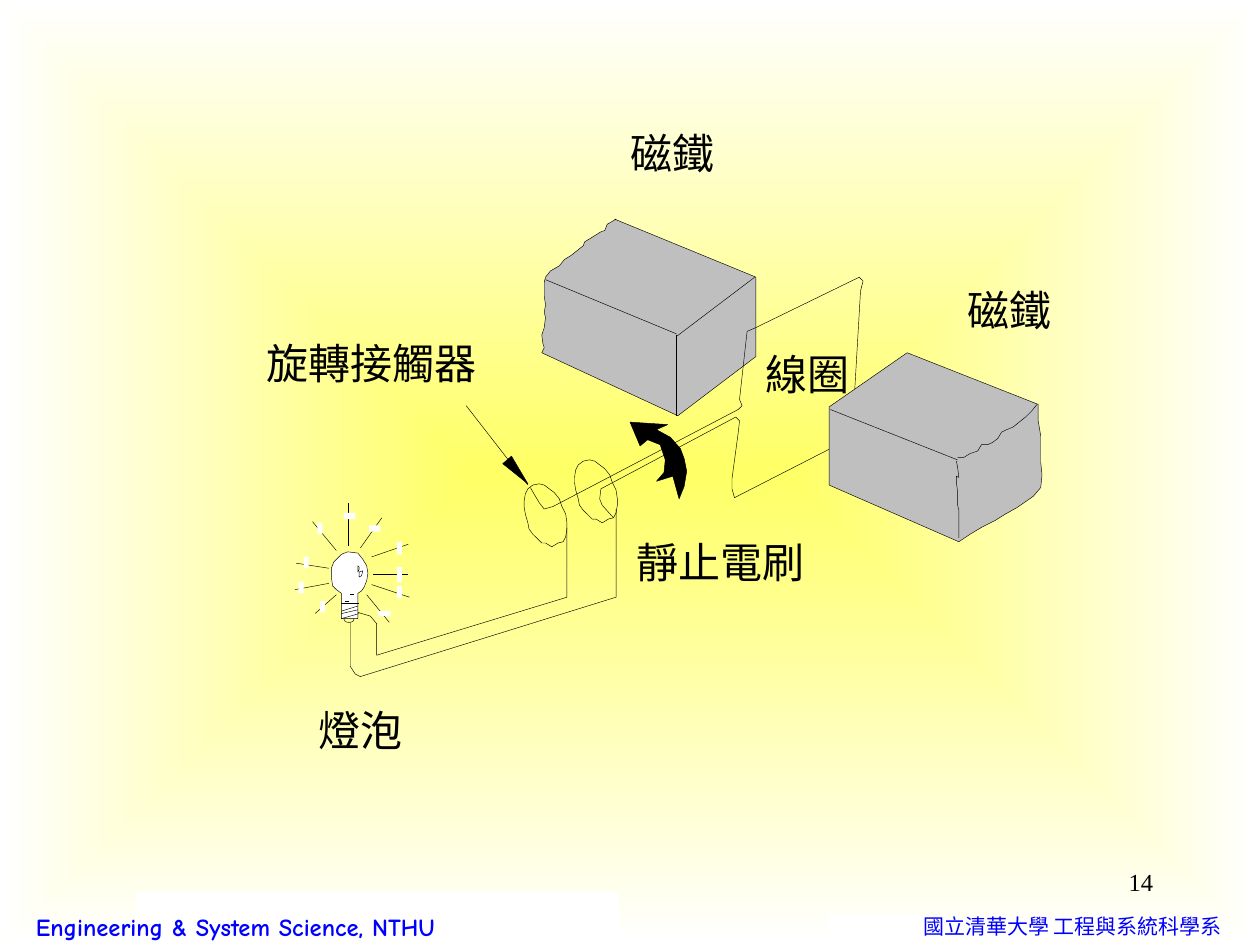
from dataclasses import dataclass

from lxml.etree import SubElement
from pptx import Presentation
from pptx.dml.color import RGBColor
from pptx.enum.shapes import MSO_CONNECTOR, MSO_SHAPE
from pptx.enum.text import MSO_ANCHOR, PP_ALIGN
from pptx.oxml.ns import qn
from pptx.util import Inches, Pt


@dataclass(frozen=True)
class Theme:
    ink: RGBColor = RGBColor(0, 0, 0)
    white: RGBColor = RGBColor(255, 255, 255)
    glow: RGBColor = RGBColor(0xFF, 0xFF, 0x66)
    magnet: RGBColor = RGBColor(0xBF, 0xBF, 0xBF)
    footer: RGBColor = RGBColor(0, 0, 255)
    serif: str = "Times New Roman"
    cjk: str = "Noto Sans CJK SC"
    comic: str = "Comic Neue"
    label_size: Pt = Pt(24)
    footer_size: Pt = Pt(14)
    department_size: Pt = Pt(12)
    hairline: Pt = Pt(0.25)
    rule: Pt = Pt(2.25)


theme = Theme()
prs = Presentation()
prs.slide_width, prs.slide_height = Inches(10), Inches(7.5)
slide = prs.slides.add_slide(prs.slide_layouts[6])
shapes = slide.shapes


def outline(points, fill=None, close=False):
    """Draw a hairline outline through points given in inches."""
    grid = [(round(x * 100), round(y * 100)) for x, y in points]
    builder = shapes.build_freeform(*grid[0], scale=Inches(0.01))
    builder.add_line_segments(grid[1:], close=close)
    shape = builder.convert_to_shape()
    shape.shadow.inherit = False
    shape.line.color.rgb = theme.ink
    shape.line.width = theme.hairline
    if fill is None:
        shape.fill.background()
    else:
        shape.fill.solid()
        shape.fill.fore_color.rgb = fill


def straight(x1, y1, x2, y2, color=theme.ink, width=theme.hairline):
    line = shapes.add_connector(MSO_CONNECTOR.STRAIGHT, Inches(x1), Inches(y1), Inches(x2), Inches(y2))
    line.line.color.rgb = color
    line.line.width = width
    SubElement(line.element.spPr, qn("a:effectLst"))


# Background glowing from the centre
background = slide.background.fill
background.gradient()
for stop, position, color in zip(background.gradient_stops, (0, 1), (theme.glow, theme.white)):
    stop.position = position
    stop.color.rgb = color
gradient = slide.element.find(".//" + qn("a:gradFill"))
gradient.remove(gradient.find(qn("a:lin")))
centre = SubElement(SubElement(gradient, qn("a:path"), {"path": "shape"}), qn("a:fillToRect"))
for side in "ltrb":
    centre.set(side, "50000")

straight(7.24, 7.32, 8.93, 7.32, theme.white, theme.rule)

# Left magnet
outline([(4.88, 1.74), (6, 2.2), (6, 2.83), (5.38, 3.3), (4.3, 2.8), (4.32, 2.76), (4.31, 2.73),
         (4.3, 2.66), (4.32, 2.6), (4.33, 2.52), (4.32, 2.48), (4.33, 2.42), (4.32, 2.35),
         (4.32, 2.24), (4.33, 2.2), (4.37, 2.15), (4.44, 2.11), (4.48, 2.06), (4.53, 2.03),
         (4.63, 1.95), (4.64, 1.92), (4.69, 1.89), (4.77, 1.84), (4.8, 1.83), (4.82, 1.78),
         (4.89, 1.74)], theme.magnet, close=True)
for edge in [(4.33, 2.22, 5.37, 2.65), (5.37, 2.66, 5.37, 3.3), (5.37, 2.67, 5.99, 2.2)]:
    straight(*edge)

# Two slip rings of the same form
ring = [(4.68, 3.65), (4.63, 3.66), (4.59, 3.69), (4.57, 3.73), (4.56, 3.79), (4.56, 3.83),
        (4.57, 3.89), (4.59, 3.96), (4.6, 4.01), (4.63, 4.05), (4.66, 4.08), (4.7, 4.12),
        (4.73, 4.12), (4.78, 4.15), (4.83, 4.12), (4.87, 4.11), (4.89, 4.07), (4.9, 4.01),
        (4.9, 3.96), (4.89, 3.89), (4.86, 3.83), (4.84, 3.77), (4.8, 3.72), (4.76, 3.69),
        (4.72, 3.66)]
for dx, dy in [(0, 0), (-0.4, 0.19)]:
    outline([(x + dx, y + dy) for x, y in ring], close=True)

# Coil and the two leads to the bulb
coil = [(4.21, 3.87), (4.28, 3.99), (4.32, 4.04), (4.39, 4.02), (5.86, 3.25), (5.89, 3.22),
        (5.87, 3.17), (5.92, 2.72), (5.93, 2.63), (6, 2.6), (6.82, 2.2), (6.85, 2.23),
        (6.83, 2.31), (6.77, 3.34), (6.77, 3.42), (6.71, 3.5), (5.83, 3.95), (5.81, 3.88),
        (5.81, 3.8), (5.86, 3.43), (5.87, 3.34), (5.84, 3.31), (4.77, 3.88), (4.76, 3.96),
        (4.78, 4.01), (4.87, 4.11)]
outer_lead = [(4.89, 4.04), (4.89, 4.74), (2.86, 5.37), (2.82, 5.35), (2.78, 5.29), (2.78, 4.94)]
inner_lead = [(4.5, 4.19), (4.5, 4.74), (2.99, 5.2), (2.99, 4.95), (2.94, 4.89), (2.84, 4.86)]
for wire in (coil, outer_lead, inner_lead):
    outline(wire)

# Light bulb
contact = shapes.add_shape(MSO_SHAPE.OVAL, Inches(2.73), Inches(4.89), Inches(0.08), Inches(0.05))
contact.shadow.inherit = False
contact.fill.background()
contact.line.color.rgb = theme.ink
contact.line.width = theme.hairline
glass = [(2.71, 4.4), (2.76, 4.38), (2.84, 4.39), (2.88, 4.44), (2.91, 4.49), (2.92, 4.55),
         (2.91, 4.61), (2.89, 4.66), (2.87, 4.69), (2.84, 4.71), (2.84, 4.91), (2.71, 4.91),
         (2.71, 4.71), (2.67, 4.68), (2.64, 4.65), (2.63, 4.58), (2.63, 4.51), (2.65, 4.46),
         (2.69, 4.42)]
glints = [[(2.88, 4.53), (2.85, 4.54), (2.85, 4.58), (2.87, 4.57)],
          [(2.84, 4.49), (2.84, 4.54), (2.85, 4.52), (2.85, 4.5)]]
for part in (glass, *glints):
    outline(part, theme.white, close=True)
screw_threads = [(2.71, 4.79, 2.85, 4.79), (2.71, 4.91, 2.85, 4.87), (2.71, 4.87, 2.84, 4.84),
                 (2.71, 4.85, 2.84, 4.81), (2.78, 4.72, 2.81, 4.72), (2.74, 4.77, 2.77, 4.77)]
rays = [(2.96, 4.56, 3.24, 4.56), (2.95, 4.64, 3.25, 4.74), (2.91, 4.72, 3.09, 4.94),
        (2.95, 4.42, 3.24, 4.32), (2.86, 4.35, 3.03, 4.11), (2.76, 4.33, 2.76, 3.99),
        (2.67, 4.37, 2.48, 4.14), (2.61, 4.51, 2.35, 4.47), (2.61, 4.63, 2.34, 4.68),
        (2.67, 4.72, 2.5, 4.87)]
for stroke in screw_threads + rays:
    straight(*stroke)

# White breaks in the rays, and white footer bands
ray_breaks = [(3.15, 4.5, 0.04, 0.12), (2.37, 4.62, 0.04, 0.09), (2.54, 4.77, 0.04, 0.09),
              (2.41, 4.42, 0.04, 0.09), (2.52, 4.15, 0.04, 0.09), (2.73, 4.07, 0.09, 0.05),
              (2.93, 4.17, 0.09, 0.05), (3.15, 4.3, 0.04, 0.1), (3.15, 4.65, 0.04, 0.1),
              (3, 4.85, 0.1, 0.04)]
footer_bands = [(1.08, 7.25, 3.67, 0.25), (6.58, 7.25, 0.75, 0.25), (1.08, 7.08, 3.83, 0.42)]
for place in ray_breaks + footer_bands:
    patch = shapes.add_shape(MSO_SHAPE.RECTANGLE, *map(Inches, place))
    patch.shadow.inherit = False
    patch.fill.solid()
    patch.fill.fore_color.rgb = theme.white
    patch.line.fill.background()

# Right magnet
outline([(7.2, 2.8), (6.58, 3.23), (6.58, 3.85), (7.61, 4.3), (7.7, 4.24), (7.8, 4.18), (7.9, 4.13),
         (7.98, 4.08), (8.07, 4.03), (8.2, 3.94), (8.26, 3.87), (8.27, 3.77), (8.26, 3.67),
         (8.26, 3.46), (8.24, 3.34), (8.24, 3.21)], theme.magnet, close=True)
straight(6.59, 3.25, 7.6, 3.65)
outline([(7.6, 3.63), (7.65, 3.63), (7.7, 3.6), (7.76, 3.58), (7.79, 3.53), (7.84, 3.53),
         (7.88, 3.51), (7.92, 3.48), (7.95, 3.43), (7.99, 3.41), (8.04, 3.39), (8.09, 3.35),
         (8.14, 3.31), (8.19, 3.26), (8.23, 3.21)])
outline([(7.59, 3.66), (7.6, 3.71), (7.61, 3.79), (7.59, 3.78), (7.59, 3.83), (7.6, 3.9),
         (7.6, 4.01), (7.61, 4.05), (7.61, 4.27)])

# Pointer to the slip ring, and the rotation arrow
straight(4.19, 3.85, 3.7, 3.22)
pointer_head = [(3.99, 3.68), (4.06, 3.62), (4.19, 3.84)]
rotation_arrow = [(5, 3.35), (5.08, 3.54), (5.14, 3.49), (5.24, 3.53), (5.28, 3.65), (5.27, 3.75),
                  (5.21, 3.82), (5.34, 3.78), (5.39, 3.96), (5.43, 3.86), (5.45, 3.74), (5.43, 3.64),
                  (5.4, 3.56), (5.32, 3.47), (5.21, 3.41), (5.3, 3.37)]
for arrow in (pointer_head, rotation_arrow):
    outline(arrow, theme.ink, close=True)

# Labels, footer and page number
label = (theme.serif, theme.label_size, theme.ink, PP_ALIGN.CENTER, (0.01, 0.01))
page = (theme.serif, theme.footer_size, theme.ink, PP_ALIGN.RIGHT, (0.1, 0.05))
department = (theme.cjk, theme.department_size, theme.footer, PP_ALIGN.LEFT, (0.1, 0.05))
school = (theme.comic, theme.footer_size, theme.footer, PP_ALIGN.CENTER, (0.1, 0.05))
captions = [
    ("磁鐵", (4.91, 1, 0.85, 0.52), label),
    ("磁鐵", (7.58, 2.25, 0.86, 0.48), label),
    ("燈泡", (2.5, 5.58, 0.72, 0.45), label),
    ("線圈", (5.95, 2.76, 0.91, 0.48), label),
    ("靜止電刷", (5, 4.25, 1.43, 0.47), label),
    ("旋轉接觸器", (1.92, 2.67, 2.05, 0.5), label),
    ("國立清華大學 工程與系統科學系", (7.23, 7.2, 2.77, 0.3), department),
    ("Engineering & System Science, NTHU", (0, 7.21, 3.74, 0.29), school),
    ("14", (7.17, 6.83, 2.08, 0.5), page),
]
for text, place, style in captions:
    font_name, size, color, align, (side_inset, end_inset) = style
    frame = shapes.add_textbox(*map(Inches, place)).text_frame
    frame.word_wrap = style is not school
    frame.vertical_anchor = MSO_ANCHOR.MIDDLE if style is school else MSO_ANCHOR.TOP
    frame.margin_left = frame.margin_right = Inches(side_inset)
    frame.margin_top = frame.margin_bottom = Inches(end_inset)
    paragraph = frame.paragraphs[0]
    paragraph.text = text
    paragraph.alignment = align
    paragraph.font.name = font_name
    paragraph.font.size = size
    paragraph.font.bold = style is school
    paragraph.font.color.rgb = color

prs.save("out.pptx")
